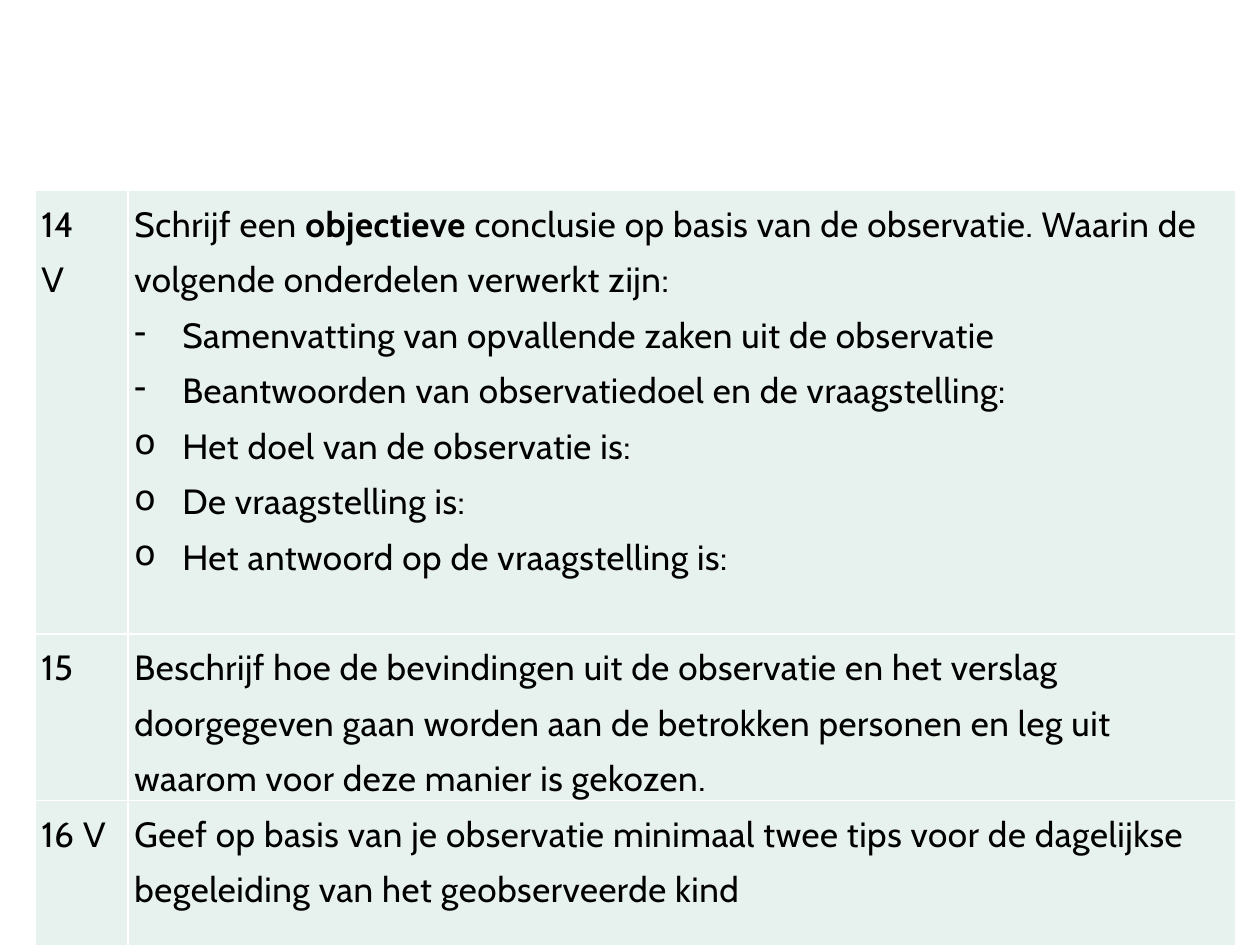
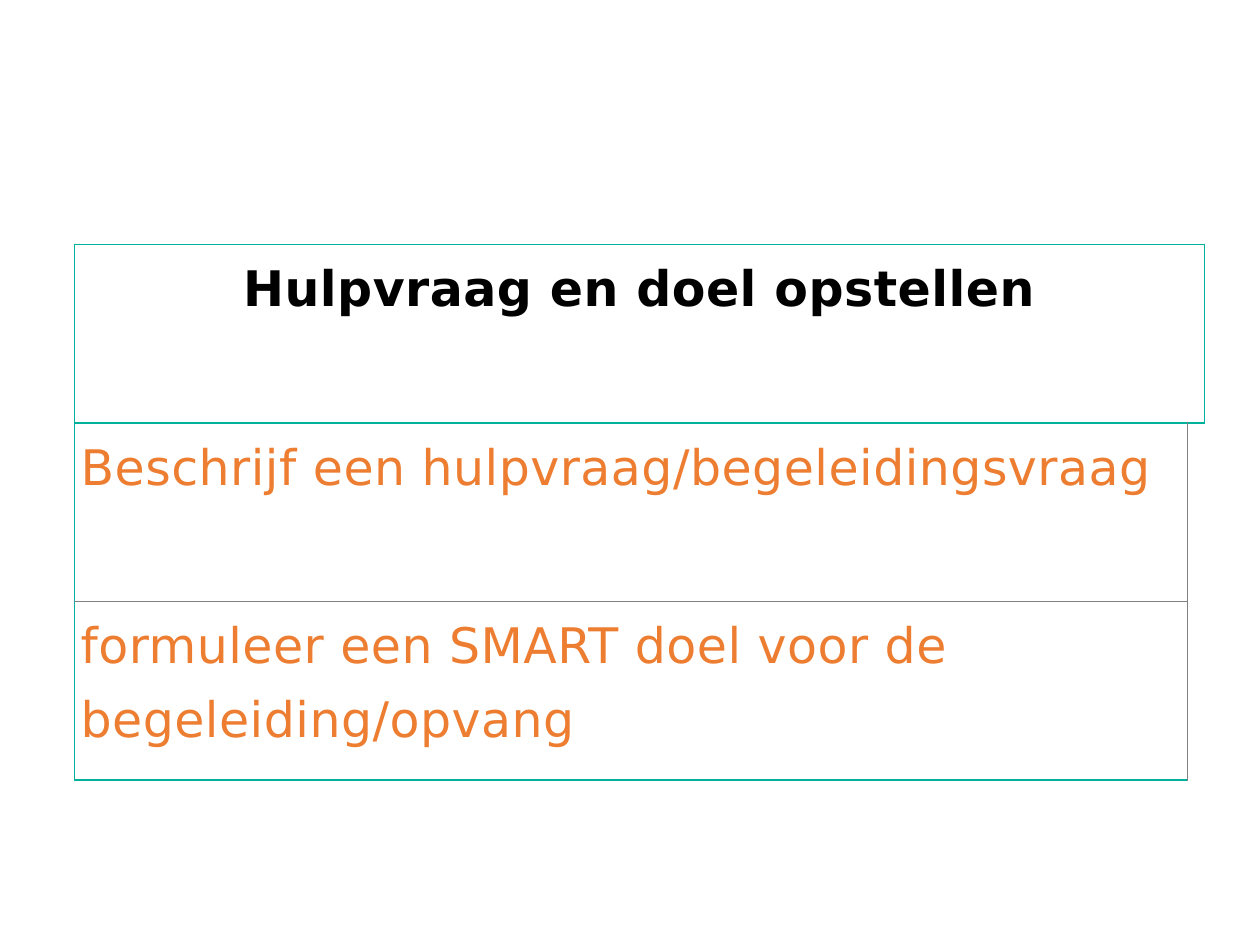
from dataclasses import dataclass

import pptx
import pptx.dml.color
import pptx.enum.text
import pptx.oxml.ns
import pptx.util
from lxml import etree

Pt = pptx.util.Pt
ALIGN = pptx.enum.text.PP_ALIGN
ANCHOR = pptx.enum.text.MSO_ANCHOR


@dataclass(frozen=True)
class Theme:
    black: str = "000000"
    white: str = "FFFFFF"
    mint: str = "E7F2EF"
    teal: str = "00B29C"
    orange: str = "ED7D31"
    grey: str = "808080"
    body_font: str = "Cabin"
    body_size: int = 20
    goal_font: str = "DejaVu Sans"
    goal_size: int = 28
    line_spacing: float = 1.3
    tracking: int = 30  # hundredths of a point
    side_margin: float = 3.6
    bullet_indent: float = 27.36
    blank_line: float = 31.6


THEME = Theme()


def add_element(parent, tag, **attributes):
    return etree.SubElement(parent, pptx.oxml.ns.qn(tag), **attributes)


# Tables and cells
def add_table(slide, left, top, widths, heights):
    frame = slide.shapes.add_table(len(heights), len(widths), Pt(left), Pt(top),
                                   Pt(sum(widths)), Pt(sum(heights)))
    table = frame.table
    table.first_row = False
    table.horz_banding = False
    for column, width in zip(table.columns, widths):
        column.width = Pt(width)
    for row, height in zip(table.rows, heights):
        row.height = Pt(height)
    return table


def style_cell(cell, borders, fill=None, anchor=ANCHOR.TOP, bottom=0):
    """Borders map a side (L, R, T, B) to a colour and a width; other sides are clear."""
    cell.margin_left = cell.margin_right = Pt(THEME.side_margin)
    cell.margin_top, cell.margin_bottom = 0, Pt(bottom)
    cell.vertical_anchor = anchor
    properties = cell._tc.get_or_add_tcPr()
    for side in "LRTB":
        color, width = borders.get(side, (None, 0))
        line = add_element(properties, f"a:ln{side}", w=str(int(Pt(width))))
        if color:
            add_element(add_element(line, "a:solidFill"), "a:srgbClr", val=color)
        else:
            add_element(line, "a:noFill")
    if fill:
        cell.fill.solid()
        cell.fill.fore_color.rgb = pptx.dml.color.RGBColor.from_string(fill)
    else:
        cell.fill.background()


# Text
def add_bullet(paragraph, character):
    properties = paragraph._p.get_or_add_pPr()
    indent = int(Pt(THEME.bullet_indent))
    properties.set("marL", str(indent))
    properties.set("indent", str(-indent))
    add_element(properties, "a:buChar", char=character)


def add_run(paragraph, text, font, size, color, bold=False):
    run = paragraph.add_run()
    run.text = text
    run.font.name = font
    run.font.size = Pt(size)
    run.font.bold = bold
    run.font.color.rgb = pptx.dml.color.RGBColor.from_string(color)
    run._r.get_or_add_rPr().set("spc", str(THEME.tracking))


def write_cell(cell, paragraphs, font, size, color, align=ALIGN.LEFT):
    """Each paragraph is a bullet character (or None) and a list of (text, bold)."""
    frame = cell.text_frame
    for index, (bullet, runs) in enumerate(paragraphs):
        paragraph = frame.add_paragraph() if index else frame.paragraphs[0]
        if bullet:
            add_bullet(paragraph, bullet)
        paragraph.alignment = align
        paragraph.line_spacing = THEME.line_spacing
        for text, bold in runs:
            add_run(paragraph, text, font, size, color, bold)


def plain(text, bullet=None):
    return bullet, [(text, False)]


# Slides
def build_assignment_slide(slide):
    conclusion = [
        (None, [("Schrijf een ", False), ("objectieve", True),
                (" conclusie op basis van de observatie. Waarin de volgende "
                 "onderdelen verwerkt zijn:", False)]),
        plain("Samenvatting van opvallende zaken uit de observatie", "-"),
        plain("Beantwoorden van observatiedoel en de vraagstelling:", "-"),
        plain("Het doel van de observatie is:", "o"),
        plain("De vraagstelling is:", "o"),
        plain("Het antwoord op de vraagstelling is:", "o"),
    ]
    reporting = [plain("Beschrijf hoe de bevindingen uit de observatie en het verslag "
                       "doorgegeven gaan worden aan de betrokken personen en leg uit "
                       "waarom voor deze manier is gekozen.")]
    tips = [plain("Geef op basis van je observatie minimaal twee tips voor de "
                  "dagelijkse begeleiding van het geobserveerde kind")]
    # Number lines, task paragraphs, space below the task
    tasks = [
        (["14", "V"], conclusion, THEME.blank_line),
        (["15"], reporting, 0),
        (["16 V"], tips, THEME.blank_line),
    ]
    table = add_table(slide, 20, 108.9, [53.2, 632.9], [232.6, 85.7, 85.7])
    borders = dict.fromkeys("LRTB", (THEME.white, 1))
    text_style = (THEME.body_font, THEME.body_size, THEME.black)
    for row, (number, task, space_below) in enumerate(tasks):
        number_cell, task_cell = table.cell(row, 0), table.cell(row, 1)
        style_cell(number_cell, borders, THEME.mint)
        style_cell(task_cell, borders, THEME.mint, ANCHOR.MIDDLE, space_below)
        write_cell(number_cell, [plain(line) for line in number], *text_style)
        write_cell(task_cell, task, *text_style)


def build_goal_slide(slide):
    table = add_table(slide, 42.5, 139.7, [635.8, 10], [102] * 3)
    teal, grey = (THEME.teal, 1), (THEME.grey, 0.5)
    text_style = (THEME.goal_font, THEME.goal_size)

    # Heading across both columns
    heading = table.cell(0, 0)
    heading.merge(table.cell(0, 1))
    for column in range(2):
        style_cell(table.cell(0, column), dict.fromkeys("LRTB", teal))
    write_cell(heading, [(None, [("Hulpvraag en doel opstellen", True)])],
               *text_style, THEME.black, ALIGN.CENTER)

    # Steps, with a narrow open column beside them
    steps = [
        ("Beschrijf een hulpvraag/begeleidingsvraag", teal, grey),
        ("formuleer een SMART doel voor de begeleiding/opvang", grey, teal),
    ]
    for row, (step, top, bottom) in enumerate(steps, start=1):
        cell = table.cell(row, 0)
        style_cell(cell, {"L": teal, "R": grey, "T": top, "B": bottom})
        write_cell(cell, [plain(step)], *text_style, THEME.orange)
        beside = {"L": grey, "T": teal} if row == 1 else {"L": grey}
        style_cell(table.cell(row, 1), beside)


def main():
    presentation = pptx.Presentation()
    presentation.slide_width, presentation.slide_height = Pt(720), Pt(540)
    blank = presentation.slide_layouts[6]
    for build in (build_assignment_slide, build_goal_slide):
        build(presentation.slides.add_slide(blank))
    presentation.save("out.pptx")


if __name__ == "__main__":
    main()
